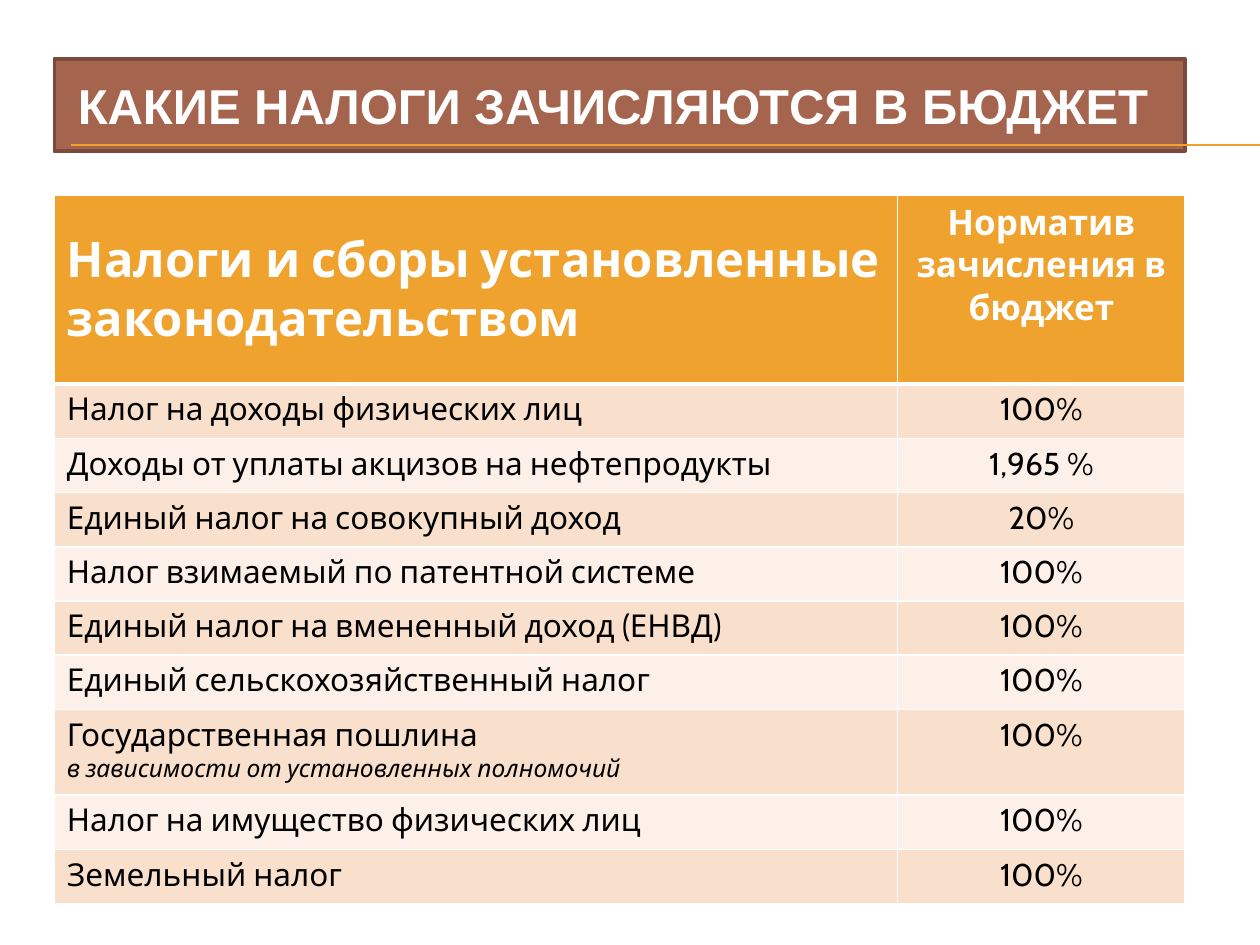
from lxml.etree import SubElement
from pptx import Presentation
from pptx.dml.color import RGBColor
from pptx.enum.shapes import MSO_CONNECTOR
from pptx.enum.text import MSO_ANCHOR, MSO_AUTO_SIZE, PP_ALIGN
from pptx.oxml import parse_xml
from pptx.oxml.ns import nsdecls, qn
from pptx.util import Pt

COLORS = {
    "accent": "F0A22E",
    "title": "A5644E",
    "title_edge": "7A4A3A",
    "band_dark": "F9E0CD",
    "band_light": "FCF0E8",
    "white": "FFFFFF",
    "text": "000000",
}

LEFT, WIDTH = 31, 646.2
COLUMN_WIDTHS = (482, 164.2)
HEADER_HEIGHT, ROW_HEIGHT, TALL_ROW_HEIGHT = 108, 31, 49

HEADERS = ("Налоги и сборы установленные законодательством",
           "Норматив зачисления в бюджет")
# Tax name, share credited to the budget, optional remark
TAXES = [
    ("Налог на доходы физических лиц", "100%", None),
    ("Доходы от уплаты акцизов на нефтепродукты", "1,965 %", None),
    ("Единый налог на совокупный доход", "20%", None),
    ("Налог взимаемый по патентной системе", "100%", None),
    ("Единый налог на вмененный доход (ЕНВД)", "100%", None),
    ("Единый сельскохозяйственный налог", "100%", None),
    ("Государственная пошлина", "100%", "в зависимости от установленных полномочий"),
    ("Налог на имущество физических лиц", "100%", None),
    ("Земельный налог", "100%", None),
]


def color(name):
    return RGBColor.from_string(COLORS[name])


class SlideBuilder:
    """Holds the text style and the slide being filled."""

    font = "Cabin"

    def __init__(self, slide):
        self.slide = slide

    def add_text(self, para, text, fill="text", align=PP_ALIGN.LEFT, **formats):
        para.alignment = align
        span = para.add_run()
        span.text = text
        values = {"name": self.font, "size": Pt(18), "bold": False, "italic": False}
        values.update(formats)
        for attribute, value in values.items():
            setattr(span.font, attribute, value)
        span.font.color.rgb = color(fill)

    def title(self, text, top, height):
        box = self.slide.shapes.title
        place = {"left": LEFT, "top": top, "width": WIDTH, "height": height}
        for attribute, value in place.items():
            setattr(box, attribute, Pt(value))
        box.fill.solid()
        box.fill.fore_color.rgb = color("title")
        box.line.color.rgb = color("title_edge")
        box.line.width = Pt(2)
        frame = box.text_frame
        formats = {"margin_left": 0, "margin_top": 0, "margin_right": 0,
                   "margin_bottom": 0, "word_wrap": True,
                   "vertical_anchor": MSO_ANCHOR.MIDDLE,
                   "auto_size": MSO_AUTO_SIZE.SHAPE_TO_FIT_TEXT}
        for attribute, value in formats.items():
            setattr(frame, attribute, value)
        self.add_text(frame.paragraphs[0], text, "white", PP_ALIGN.CENTER,
                      name="Arial", size=Pt(28), bold=True)

    def rule(self, left, right, y):
        line = self.slide.shapes.add_connector(
            MSO_CONNECTOR.STRAIGHT, Pt(left), Pt(y), Pt(right), Pt(y))
        line.line.color.rgb = color("accent")
        line.line.width = Pt(0.75)
        SubElement(line._element.spPr, qn("a:effectLst"))

    def cell(self, cell, fill, top=1, bottom=1):
        """Fill a cell and give it white borders."""
        cell.fill.solid()
        cell.fill.fore_color.rgb = color(fill)
        properties = cell._tc.get_or_add_tcPr()
        widths = {"lnL": 1, "lnR": 1, "lnT": top, "lnB": bottom}
        for position, (side, width) in enumerate(widths.items()):
            properties.insert(position, parse_xml(
                f'<a:{side} {nsdecls("a")} w="{Pt(width)}"><a:solidFill>'
                f'<a:srgbClr val="{COLORS["white"]}"/></a:solidFill></a:{side}>'))

    def tax_table(self, top):
        heights = [HEADER_HEIGHT] + [
            TALL_ROW_HEIGHT if remark else ROW_HEIGHT for _, _, remark in TAXES]
        table = self.slide.shapes.add_table(
            len(heights), len(COLUMN_WIDTHS), Pt(LEFT), Pt(top),
            Pt(WIDTH), Pt(sum(heights))).table
        for column, width in zip(table.columns, COLUMN_WIDTHS):
            column.width = Pt(width)
        for row, height in zip(table.rows, heights):
            row.height = Pt(height)

        aligns = (PP_ALIGN.LEFT, PP_ALIGN.CENTER)
        for index, (text, size) in enumerate(zip(HEADERS, (28, 20))):
            cell = table.cell(0, index)
            self.cell(cell, "accent", bottom=3)
            self.add_text(cell.text_frame.paragraphs[0], text, "white",
                          aligns[index], size=Pt(size), bold=True)
        table.cell(0, 0).vertical_anchor = MSO_ANCHOR.MIDDLE

        for number, (name, share, remark) in enumerate(TAXES, 1):
            band = "band_dark" if number % 2 else "band_light"
            for index, text in enumerate((name, share)):
                cell = table.cell(number, index)
                self.cell(cell, band, top=3 if number == 1 else 1)
                self.add_text(cell.text_frame.paragraphs[0], text, align=aligns[index])
            if remark:
                self.add_text(table.cell(number, 0).text_frame.add_paragraph(),
                              remark, size=Pt(14), italic=True)


def main():
    deck = Presentation()
    deck.slide_width, deck.slide_height = Pt(720), Pt(540)
    page = SlideBuilder(deck.slides.add_slide(deck.slide_layouts[5]))
    for y in (82.8, 83.3):
        page.rule(40.5, 720, y)
    page.tax_table(111.5)
    page.title("КАКИЕ НАЛОГИ ЗАЧИСЛЯЮТСЯ В БЮДЖЕТ ", 43, 34)
    deck.save("out.pptx")


if __name__ == "__main__":
    main()
